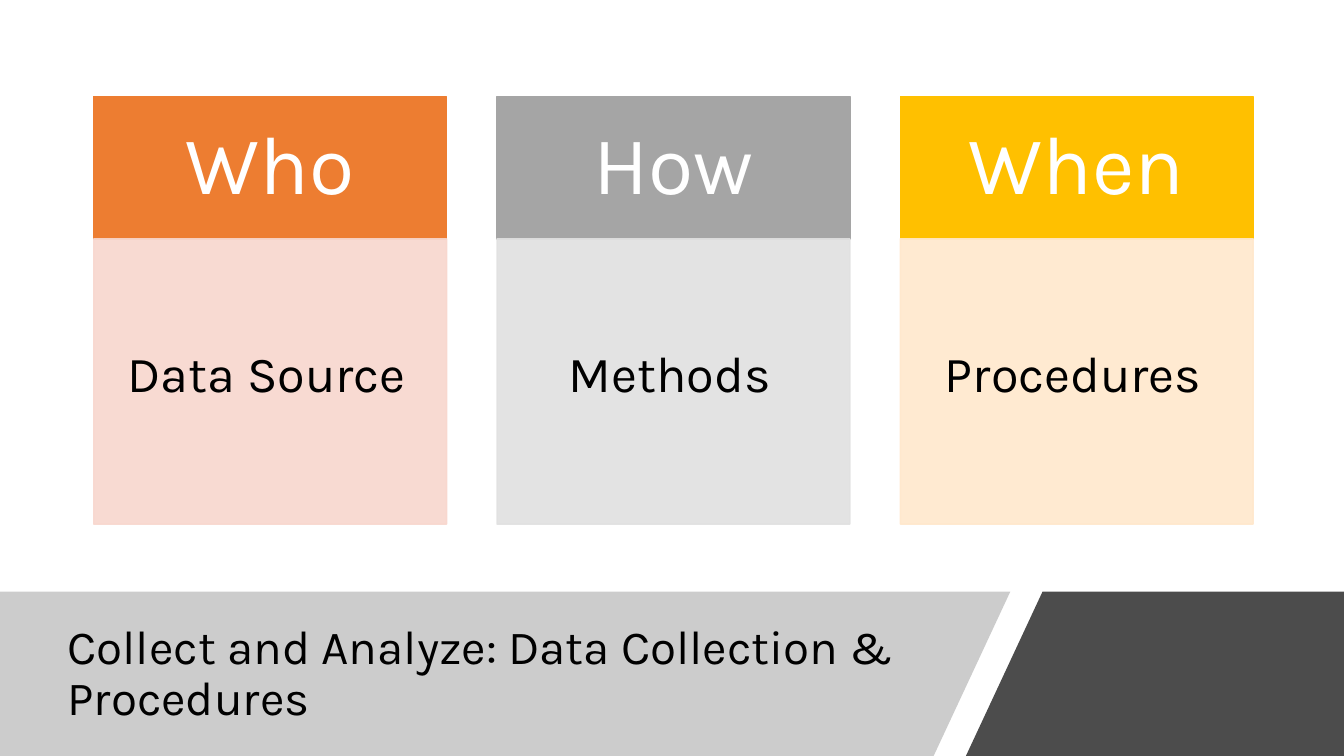
from lxml import etree
from pptx import Presentation
from pptx import util as u
from pptx.dml.color import RGBColor
from pptx.enum import shapes, text
from pptx.oxml.ns import qn

COLORS = {
    "who": "ED7D31", "who_tint": "F8D7CE",
    "how": "A5A5A5", "how_tint": "E1E1E1",
    "when": "FFC000", "when_tint": "FFE8CC",
    "band": "808080", "black": "000000", "white": "FFFFFF",
}
WIDTH, HEIGHT = 13.33, 7.5

# Grid of question columns, in inches
LEFT, COLUMN, GAP = 0.93, 3.5, 0.5
ROWS = [(0.96, 1.41), (2.37, 2.83)]  # top and height: heading, answer
BAND_TOP = 5.87


class SlideBuilder:
    """Holds the style and the current slide."""

    def __init__(self, deck, font):
        self.font = font
        self.slide = deck.slides.add_slide(deck.slide_layouts[5])

    def paint(self, fill, color, opacity=100):
        fill.solid()
        fill.fore_color.rgb = RGBColor.from_string(COLORS[color])
        if opacity < 100:
            for rgb in fill._xPr.iter(qn("a:srgbClr")):
                alpha = etree.SubElement(rgb, qn("a:alpha"))
                alpha.set("val", str(opacity * 1000))

    def set_words(self, frame, words, size, color, align, insets):
        frame.text = words
        frame.word_wrap = True
        frame.auto_size = text.MSO_AUTO_SIZE.NONE
        frame.vertical_anchor = text.MSO_ANCHOR.MIDDLE
        (frame.margin_left, frame.margin_top,
         frame.margin_right, frame.margin_bottom) = map(u.Inches, insets)
        paragraph = frame.paragraphs[0]
        paragraph.alignment = align
        paragraph.line_spacing = 0.9
        for run in paragraph.runs:
            run.font.name = self.font
            run.font.size = u.Pt(size)
            run.font.color.rgb = RGBColor.from_string(COLORS[color])

    def panel(self, column, row, words, size, color, ink, insets, opacity=100):
        top, height = ROWS[row]
        panel = self.slide.shapes.add_shape(
            shapes.MSO_SHAPE.RECTANGLE,
            u.Inches(LEFT + column * (COLUMN + GAP)), u.Inches(top),
            u.Inches(COLUMN), u.Inches(height))
        panel.shadow.inherit = False
        self.paint(panel.fill, color, opacity)
        self.paint(panel.line.fill, color, opacity)
        panel.line.width = u.Pt(1)
        self.set_words(panel.text_frame, words, size, ink,
                       text.PP_ALIGN.CENTER, insets)

    def band(self, corners, color, opacity):
        points = [(u.Inches(x), u.Inches(y)) for x, y in corners]
        outline = self.slide.shapes.build_freeform(*points[0])
        outline.add_line_segments(points[1:], close=True)
        band = outline.convert_to_shape()
        band.shadow.inherit = False
        self.paint(band.fill, color, opacity)
        band.line.fill.background()

    def title(self, words, left, top, width, height):
        title = self.slide.shapes.title
        title.left, title.top = u.Inches(left), u.Inches(top)
        title.width, title.height = u.Inches(width), u.Inches(height)
        self.set_words(title.text_frame, words, 34, "black",
                       text.PP_ALIGN.LEFT, (0.1, 0.05, 0.1, 0.05))
        # Bring the title in front of the band
        self.slide.shapes._spTree.append(title._element)


def main():
    deck = Presentation()
    deck.slide_width, deck.slide_height = u.Inches(WIDTH), u.Inches(HEIGHT)
    builder = SlideBuilder(deck, "Karla")

    # Footer bands and title
    builder.band([(0, BAND_TOP), (10.02, BAND_TOP), (9.26, HEIGHT), (0, HEIGHT)],
                 "band", 40)
    builder.title("Collect and Analyze: Data Collection & Procedures",
                  0.57, 6.09, 8.44, 1.2)
    builder.band([(10.34, BAND_TOP), (WIDTH, BAND_TOP), (WIDTH, HEIGHT),
                  (9.58, HEIGHT)], "black", 70)

    # Question columns
    questions = [("Who", "Data Source"), ("How", "Methods"),
                 ("When", "Procedures")]
    for column, (question, answer) in enumerate(questions):
        key = question.lower()
        builder.panel(column, 0, question, 59, key, "white",
                      (0.46, 0.26, 0.46, 0.26))
        builder.panel(column, 1, answer, 36, key + "_tint", "black",
                      (0.21, 0.21, 0.28, 0.32), opacity=90)

    deck.save("out.pptx")


if __name__ == "__main__":
    main()
